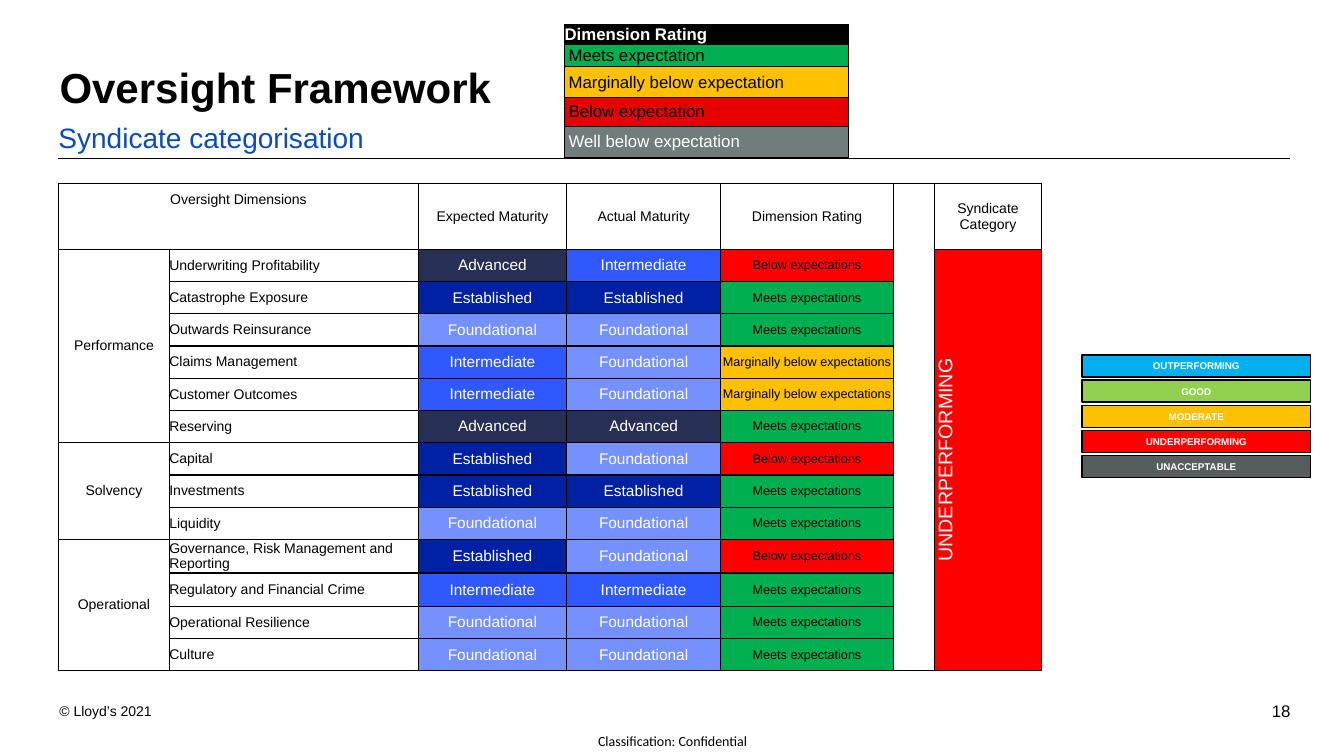
from dataclasses import dataclass
from lxml import etree
from pptx import Presentation
from pptx.dml.color import RGBColor
from pptx.enum.shapes import MSO_CONNECTOR, MSO_SHAPE
from pptx.enum.text import MSO_ANCHOR, MSO_AUTO_SIZE, PP_ALIGN
from pptx.oxml import parse_xml
from pptx.oxml.ns import nsdecls, qn
from pptx.util import Inches, Pt

LEFT, MID, RIGHT = PP_ALIGN.LEFT, PP_ALIGN.CENTER, PP_ALIGN.RIGHT
CENTRE, TOP = MSO_ANCHOR.MIDDLE, MSO_ANCHOR.TOP
FIXED, RECT, LINE = MSO_AUTO_SIZE.NONE, MSO_SHAPE.RECTANGLE, MSO_CONNECTOR.STRAIGHT
BLACK, WHITE, RED, GREEN, AMBER = "000000", "FFFFFF", "FF0000", "00B050", "FFC000"

LEVELS = {"Advanced": "282F54", "Established": "0021A4",
          "Intermediate": "2F59FF", "Foundational": "7590FF"}
RATINGS = {"Meets expectations": GREEN, "Below expectations": RED,
           "Marginally below expectations": AMBER}
ADV, EST, INTER, FOUND = LEVELS
MEETS, BELOW, MARGIN = RATINGS


@dataclass
class Row:
    name: str
    want: str
    real: str
    rating: str


@dataclass
class Label:
    text: str
    fill: str
    ink: str = WHITE
    bold: bool = False
    high: float = 0.22
    pad: float = 0


GROUPS = {
    "Performance": [
        Row("Underwriting Profitability", ADV, INTER, BELOW),
        Row("Catastrophe Exposure", EST, EST, MEETS),
        Row("Outwards Reinsurance", FOUND, FOUND, MEETS),
        Row("Claims Management", INTER, FOUND, MARGIN),
        Row("Customer Outcomes", INTER, FOUND, MARGIN),
        Row("Reserving", ADV, ADV, MEETS)],
    "Solvency": [
        Row("Capital", EST, FOUND, BELOW),
        Row("Investments", EST, EST, MEETS),
        Row("Liquidity", FOUND, FOUND, MEETS)],
    "Operational": [
        Row("Governance, Risk Management and Reporting", EST, FOUND, BELOW),
        Row("Regulatory and Financial Crime", INTER, INTER, MEETS),
        Row("Operational Resilience", FOUND, FOUND, MEETS),
        Row("Culture", FOUND, FOUND, MEETS)],
}
HEADS = {2: "Expected Maturity", 3: "Actual Maturity",
         4: "Dimension Rating", 6: "Syndicate Category"}
OPEN = {(0, 0): "B", (0, 1): "B", (1, 0): "TR", (1, 1): "TL"}
KEY = [
    Label("Dimension Rating", BLACK, bold=True, high=0.2),
    Label("Meets expectation", GREEN, BLACK, high=0.22, pad=0.04),
    Label("Marginally below expectation", AMBER, BLACK, high=0.31, pad=0.04),
    Label("Below expectation", "E60000", BLACK, high=0.28, pad=0.04),
    Label("Well below expectation", "717C7C", high=0.31, pad=0.04)]
BANDS = [
    Label("OUTPERFORMING", "00B0F0"), Label("GOOD", "92D050"),
    Label("MODERATE", AMBER), Label("UNDERPERFORMING", RED),
    Label("UNACCEPTABLE", "555D5D")]


def tint(part, hue: str) -> None:
    part.solid()
    part.fore_color.rgb = RGBColor.from_string(hue)


def put(frame, text: str, size: float = 10, ink: str = BLACK, bold: bool = False,
        align=LEFT, font: str = "Arial") -> None:
    para = frame.paragraphs[0]
    para.alignment = align
    run = para.add_run()
    run.text = text
    run.font.size, run.font.bold, run.font.name = Pt(size), bold, font
    tint(run.font.fill, ink)


def box(slide, area: tuple, text: str, anchor=TOP, **form) -> None:
    frame = slide.shapes.add_textbox(*map(Inches, area)).text_frame
    frame.word_wrap, frame.vertical_anchor = True, anchor
    frame.margin_left = frame.margin_right = frame.margin_top = frame.margin_bottom = 0
    put(frame, text, **form)


def edge(cell, width: float, off: str = "") -> None:
    props = cell._tc.get_or_add_tcPr()
    for side in "LRTB":
        fill = "<a:noFill/>" if side in off else (
            f'<a:solidFill><a:srgbClr val="{BLACK}"/></a:solidFill>')
        props.append(parse_xml(
            f'<a:ln{side} {nsdecls("a")} w="{Pt(width)}">{fill}</a:ln{side}>'))


def grid(slide, left: float, top: float, cols: list, rows: list, width: float, gaps: dict):
    shape = slide.shapes.add_table(len(rows), len(cols), Inches(left), Inches(top),
                                   Inches(sum(cols)), Inches(sum(rows)))
    table = shape.table
    table.first_row = table.horz_banding = False
    for col, size in zip(table.columns, cols):
        col.width = Inches(size)
    for y, size in enumerate(rows):
        table.rows[y].height = Inches(size)
        for x in range(len(cols)):
            cell = table.cell(y, x)
            cell.margin_left = cell.margin_right = cell.margin_top = cell.margin_bottom = 0
            cell.vertical_anchor = CENTRE
            edge(cell, width, gaps.get((y, x), ""))
            cell.fill.background()
    return table


def write(cell, text: str, fill: str = "", **form) -> None:
    if fill:
        tint(cell.fill, fill)
    put(cell.text_frame, text, **form)


def matrix(slide) -> None:
    cols = [1.1, 2.47, 1.47, 1.53, 1.71, 0.41, 1.06]
    rows = [0.32] * 12 + [0.33] + [0.32] * 2
    table = grid(slide, 0.58, 1.82, cols, rows, 1, OPEN)
    table.cell(0, 0).merge(table.cell(0, 1))
    write(table.cell(0, 0), "Oversight Dimensions", align=MID)
    for x, text in HEADS.items():
        table.cell(0, x).merge(table.cell(1, x))
        write(table.cell(0, x), text, align=MID)
    last = len(rows) - 1
    table.cell(0, 5).merge(table.cell(last, 5))
    total = table.cell(2, 6)
    total.merge(table.cell(last, 6))
    write(total, "UNDERPERFORMING", RED, size=14, ink=WHITE, align=MID)
    total._tc.get_or_add_tcPr().set("vert", "vert270")
    y = 2
    for group, items in GROUPS.items():
        table.cell(y, 0).merge(table.cell(y + len(items) - 1, 0))
        write(table.cell(y, 0), group, align=MID)
        for item in items:
            write(table.cell(y, 1), item.name)
            for x, level in enumerate((item.want, item.real), 2):
                write(table.cell(y, x), level, LEVELS[level], size=11, ink=WHITE, align=MID)
            write(table.cell(y, 4), item.rating, RATINGS[item.rating], size=9, align=MID)
            y += 1


def legend(slide) -> None:
    table = grid(slide, 5.6, 0.24, [2.81], [key.high for key in KEY], 0.5, {})
    for y, key in enumerate(KEY):
        cell = table.cell(y, 0)
        cell.margin_left = Inches(key.pad)
        write(cell, key.text, key.fill, size=12, ink=key.ink, bold=key.bold)


def scale(slide) -> None:
    for n, band in enumerate(BANDS):
        shape = slide.shapes.add_shape(RECT, Inches(10.73), Inches(3.52 + 0.25 * n),
                                       Inches(2.27), Inches(band.high))
        shape.shadow.inherit = False
        tint(shape.fill, band.fill)
        tint(shape.line.fill, BLACK)
        shape.line.width = Pt(1)
        shape.text_frame.vertical_anchor = CENTRE
        put(shape.text_frame, band.text, size=7, ink=band.ink, bold=True, align=MID)


def head(slide) -> None:
    title = slide.shapes.title
    title.left, title.top, title.width, title.height = map(Inches, (0.59, 0.59, 12.2, 0.61))
    frame = title.text_frame
    frame.auto_size, frame.vertical_anchor = FIXED, CENTRE
    frame.margin_left = frame.margin_right = 0
    frame.margin_top = frame.margin_bottom = Inches(0.08)
    put(frame, "Oversight Framework", size=30, bold=True)
    frame.paragraphs[0].line_spacing = 0.9
    rule = slide.shapes.add_connector(LINE, *map(Inches, (0.58, 1.57, 12.79, 1.57)))
    tint(rule.line.fill, BLACK)
    rule.line.width = Pt(0.5)
    etree.SubElement(rule._element.spPr, qn("a:effectLst"))


def main() -> None:
    deck = Presentation()
    deck.slide_width, deck.slide_height = Inches(13.33), Inches(7.5)
    slide = deck.slides.add_slide(deck.slide_layouts[5])
    head(slide)
    box(slide, (12.48, 6.91, 0.32, 0.28), "18", CENTRE, size=12, align=RIGHT)
    box(slide, (0.59, 6.97, 1.63, 0.17), "© Lloyd’s 2021")
    box(slide, (5.76, 7.21, 1.82, 0.29), "Classification: Confidential", CENTRE,
        align=MID, font="Calibri")
    matrix(slide)
    box(slide, (0.58, 1.2, 12.2, 0.93), "Syndicate categorisation", size=20, ink="0A4BB7")
    legend(slide)
    scale(slide)
    deck.save("out.pptx")


if __name__ == "__main__":
    main()
